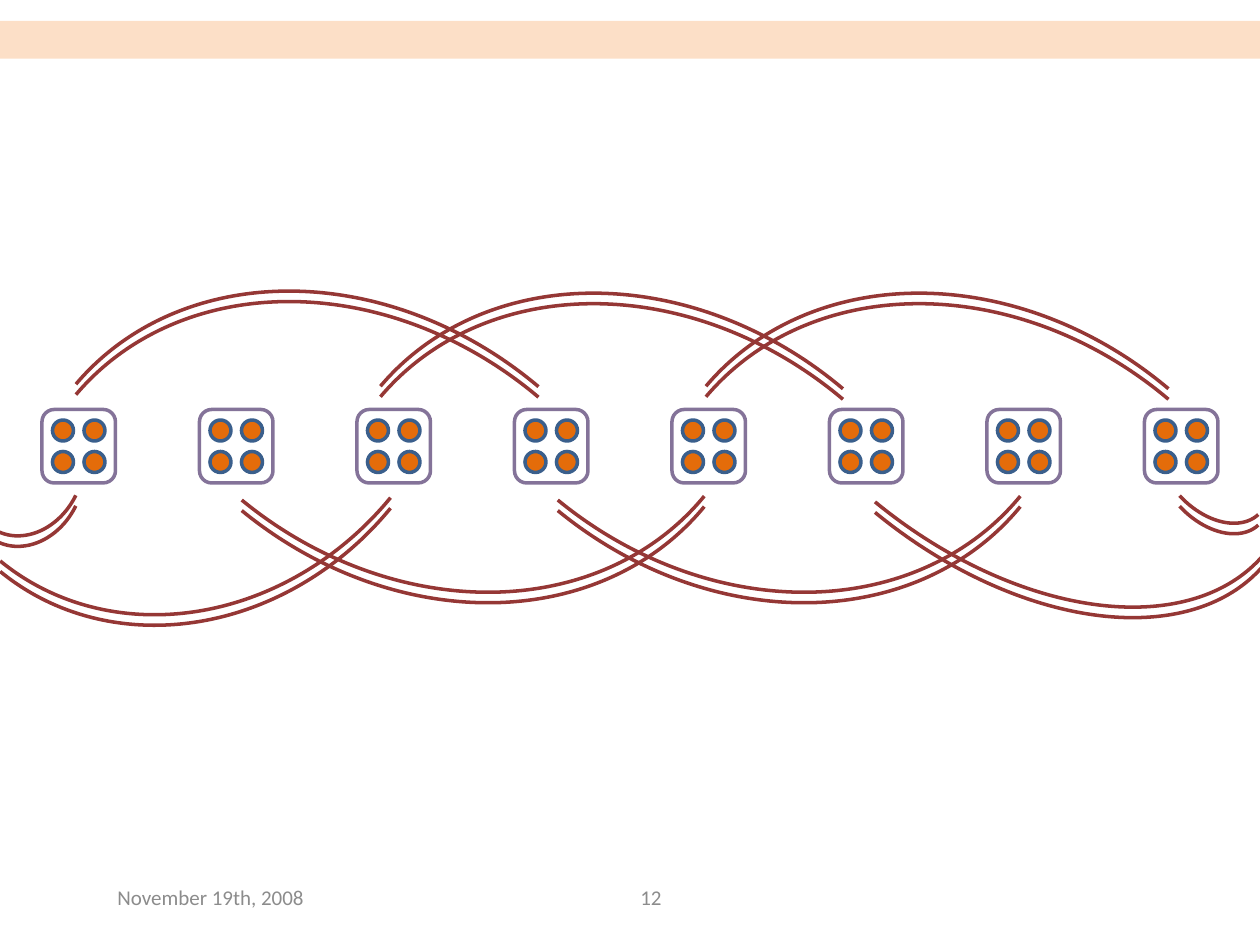
import dataclasses
import itertools
import typing

import lxml.etree
import pptx
import pptx.dml.color
import pptx.enum.shapes
import pptx.enum.text
import pptx.oxml.ns
import pptx.util

EMU_PER_PX = 7620
SHAPE = pptx.enum.shapes.MSO_SHAPE
ALIGN = pptx.enum.text.PP_ALIGN


@dataclasses.dataclass(frozen=True)
class Theme:
    band: str = "FAC090"
    core: str = "E46C0A"
    core_line: str = "3A5F8C"
    node_line: str = "604A7B"
    link: str = "953735"
    footer: str = "8C8C8C"
    font: str = "Calibri"
    footer_size: int = 12
    line_width: int = 2


@dataclasses.dataclass(frozen=True)
class Area:
    left: int
    top: int
    width: int
    height: int


@dataclasses.dataclass(frozen=True)
class Link:
    area: Area
    rotation: float


THEME = Theme()
NODE_COUNT, NODE_PITCH, NODE_SIZE = 8, 150, 70
NODE_LEFT, NODE_TOP = 40, 390
CORE_SIZE, CORE_PITCH, CORE_INSET = 20, 30, 10
STRAND_GAP = 10

LINKS = [
    *(Link(Area(left, top, 565, 676), 310.2)
      for left, top in ((48, 246), (338, 248), (648, 248))),
    *(Link(Area(left, -80, 565, 676), 129.4) for left in (428, 127)),
    Link(Area(-38, 397, 127, 104), 116.1),
    Link(Area(1112, 379, 86, 128), 137.4),
    Link(Area(-103, 67, 565, 498), 129.4),
    Link(Area(761, 7, 396, 636), 129.4),
]


def px(length: int) -> pptx.util.Emu:
    return pptx.util.Emu(length * EMU_PER_PX)


def color(value: str) -> pptx.dml.color.RGBColor:
    return pptx.dml.color.RGBColor.from_string(value)


def place(area: Area) -> tuple:
    return px(area.left), px(area.top), px(area.width), px(area.height)


def add_figure(page, kind, area: Area, *, fill: typing.Optional[str] = None,
               line: typing.Optional[str] = None, rotation: float = 0,
               opacity: int = 100):
    figure = page.shapes.add_shape(kind, *place(area))
    figure.shadow.inherit = False
    figure.rotation = rotation
    if fill:
        figure.fill.solid()
        figure.fill.fore_color.rgb = color(fill)
    else:
        figure.fill.background()
    if line:
        figure.line.color.rgb = color(line)
        figure.line.width = pptx.util.Pt(THEME.line_width)
    else:
        figure.line.fill.background()
    if opacity < 100:
        for tint in figure.element.spPr.iter(pptx.oxml.ns.qn("a:srgbClr")):
            alpha = lxml.etree.SubElement(tint, pptx.oxml.ns.qn("a:alpha"))
            alpha.set("val", str(opacity * 1000))
    return figure


def add_text(page, text: str, area: Area, *, align=ALIGN.LEFT):
    box = page.shapes.add_textbox(*place(area))
    box.text_frame.word_wrap = True
    box.text_frame.vertical_anchor = pptx.enum.text.MSO_ANCHOR.MIDDLE
    para = box.text_frame.paragraphs[0]
    para.alignment = align
    span = para.add_run()
    span.text = text
    span.font.name = THEME.font
    span.font.size = pptx.util.Pt(THEME.footer_size)
    span.font.color.rgb = color(THEME.footer)
    return box


def add_node(page, left: int, top: int) -> None:
    add_figure(page, SHAPE.ROUNDED_RECTANGLE,
               Area(left, top, NODE_SIZE, NODE_SIZE),
               line=THEME.node_line, opacity=77)
    for row, column in itertools.product(range(2), repeat=2):
        core = Area(left + CORE_INSET + column * CORE_PITCH,
                    top + CORE_INSET + row * CORE_PITCH, CORE_SIZE, CORE_SIZE)
        add_figure(page, SHAPE.OVAL, core, fill=THEME.core, line=THEME.core_line)


def add_link(page, link: Link) -> None:
    for shift in (0, STRAND_GAP):
        strand = dataclasses.replace(link.area, top=link.area.top + shift)
        add_figure(page, SHAPE.ARC, strand, line=THEME.link, rotation=link.rotation)


def main() -> None:
    deck = pptx.Presentation()
    deck.slide_width, deck.slide_height = px(1200), px(900)
    page = deck.slides.add_slide(deck.slide_layouts.get_by_name("Blank"))
    add_text(page, "November 19th, 2008", Area(100, 830, 280, 48))
    add_text(page, "12", Area(480, 830, 280, 48), align=ALIGN.CENTER)
    for index in range(NODE_COUNT):
        add_node(page, NODE_LEFT + index * NODE_PITCH, NODE_TOP)
    for link in LINKS:
        add_link(page, link)
    add_figure(page, SHAPE.RECTANGLE, Area(0, 20, 1200, 36),
               fill=THEME.band, opacity=50)
    deck.save("out.pptx")


if __name__ == "__main__":
    main()
